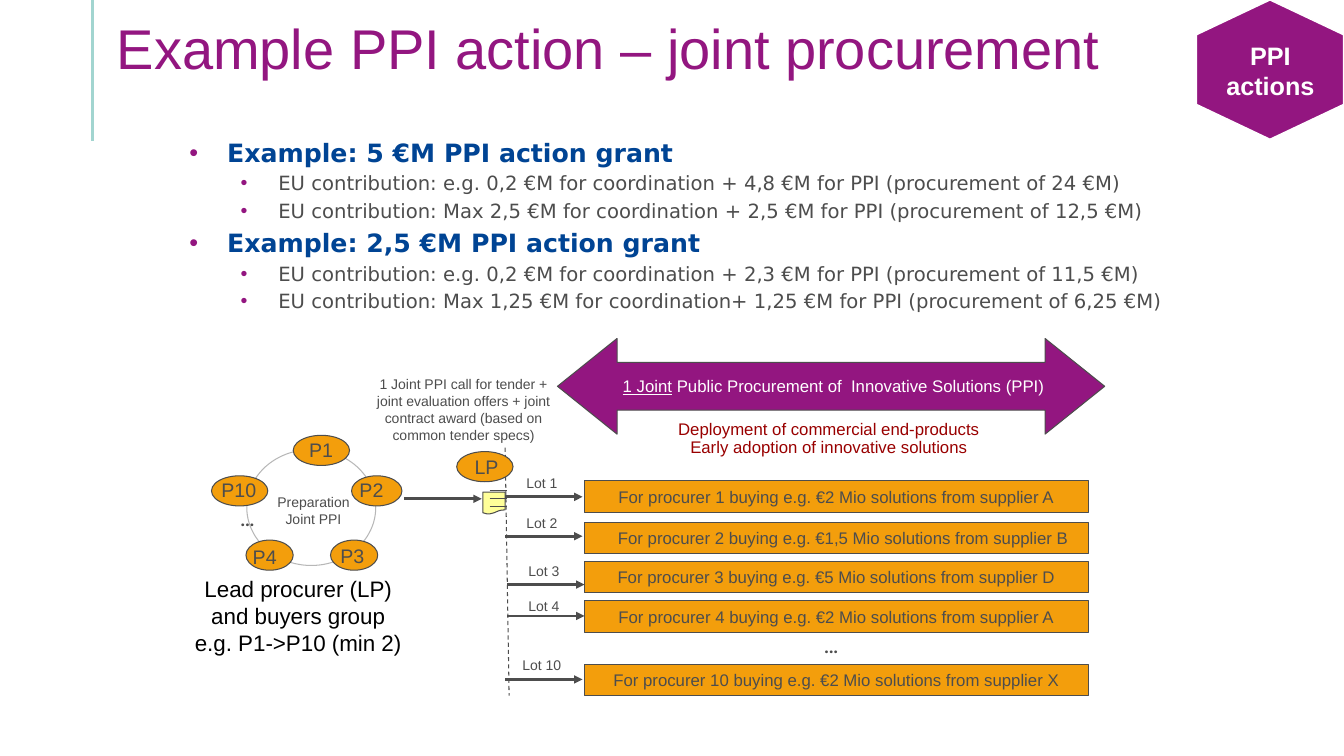
from lxml import etree
from pptx import Presentation
from pptx import util as u
from pptx.dml.color import RGBColor
from pptx.enum import dml, shapes, text
from pptx.oxml.ns import qn

HUES = {
    "plum": "931680", "gold": "F39E0C", "grey": "4D4D4D", "white": "FFFFFF",
    "blue": "004494", "mint": "A2D5D0", "red": "990000", "cream": "FFFF99",
    "black": "000000",
}
FORM = shapes.MSO_SHAPE
LEFT, MID = text.PP_ALIGN.LEFT, text.PP_ALIGN.CENTER

POINTS = [
    (0, "Example: 5 €M PPI action grant"),
    (1, "EU contribution: e.g. 0,2 €M for coordination + 4,8 €M for PPI (procurement of 24 €M)"),
    (1, "EU contribution: Max 2,5 €M for coordination + 2,5 €M for PPI (procurement of 12,5 €M)"),
    (0, "Example: 2,5 €M PPI action grant"),
    (1, "EU contribution: e.g. 0,2 €M for coordination + 2,3 €M for PPI (procurement of 11,5 €M)"),
    (1, "EU contribution: Max 1,25 €M for coordination+ 1,25 €M for PPI (procurement of 6,25 €M)"),
]
BUYERS = [
    ("P1", 7.39, 10.97, 1.42, 7.54, 10.92),
    ("P2", 8.86, 11.99, 1.27, 8.81, 11.91),
    ("P10", 5.33, 11.99, 1.42, 5.33, 11.91),
    ("P4", 6.2, 13.61, 1.19, 6.12, 13.61),
    ("P3", 8.33, 13.61, 1.19, 8.33, 13.59),
]
LEAD = ("LP", 11.51, 11.38, 1.42, 11.71, 11.33)
LOTS = [
    (1, "€2", "A", 12.12, 12.52, 11.84, 12.73, 0),
    (2, "€1,5", "B", 13.16, 13.51, 12.85, 12.73, 0.35),
    (3, "€5", "D", 14.15, 14.73, 14.05, 12.78, 0),
    (4, "€2", "A", 15.14, 15.52, 14.94, 12.78, 0),
    (10, "€2", "X", 16.74, 17.12, 16.43, 12.73, 0),
]


def hue(name):
    return RGBColor.from_string(HUES[name])


def span(*sizes):
    return [u.Cm(size) for size in sizes]


def style(para, size, tint, font="Arial", bold=False, align=LEFT):
    para.alignment = align
    for run in para.runs:
        run.font.size = u.Pt(size)
        run.font.name = font
        run.font.bold = bold
        run.font.color.rgb = hue(tint)


def label(slide, box, words, size, tint="grey", **look):
    frame = slide.shapes.add_textbox(*span(*box)).text_frame
    frame.word_wrap = True
    frame.text = words
    for para in frame.paragraphs:
        style(para, size, tint, **look)
    return frame


def block(slide, kind, box, fill, edge="grey", width=0.75):
    shape = slide.shapes.add_shape(kind, *span(*box))
    shape.shadow.inherit = False
    if fill:
        shape.fill.solid()
        shape.fill.fore_color.rgb = hue(fill)
    else:
        shape.fill.background()
    shape.line.color.rgb = hue(edge)
    shape.line.width = u.Pt(width)
    return shape


def line(slide, ends, tint="grey", width=0.75, head=False, dash=False):
    link = slide.shapes.add_connector(shapes.MSO_CONNECTOR.STRAIGHT, *span(*ends))
    link.line.color.rgb = hue(tint)
    link.line.width = u.Pt(width)
    if dash:
        link.line.dash_style = dml.MSO_LINE.DASH
    props = link._element.spPr
    if head:
        etree.SubElement(props.find(qn("a:ln")), qn("a:tailEnd"), type="triangle")
    etree.SubElement(props, qn("a:effectLst"))


def node(slide, name, left, top, width, tx, ty):
    block(slide, FORM.OVAL, (left, top, width, 0.76), "gold")
    label(slide, (tx, ty, 1.75, 0.86), name, 14)


def place(holder, box):
    holder.left, holder.top, holder.width, holder.height = span(*box)
    holder.text_frame.auto_size = text.MSO_AUTO_SIZE.NONE


def title(slide):
    head = slide.shapes.title
    place(head, (2.69, -0.13, 30.71, 2.18))
    frame = head.text_frame
    frame.text = "Example PPI action – joint procurement"
    frame.vertical_anchor = text.MSO_ANCHOR.BOTTOM
    frame.margin_bottom = 0
    frame.paragraphs[0].line_spacing = 0.9
    style(frame.paragraphs[0], 40, "plum")


def bullet(para, indent):
    props = para._p.get_or_add_pPr()
    props.set("marL", str(u.Cm(indent)))
    props.set("indent", str(u.Cm(-0.95)))
    tone = etree.SubElement(props, qn("a:buClr"))
    etree.SubElement(tone, qn("a:srgbClr"), val=HUES["plum"])
    etree.SubElement(props, qn("a:buChar"), char="•")


def points(slide):
    body = slide.placeholders[1]
    place(body, (4.52, 3.33, 25.4, 4.83))
    frame = body.text_frame
    frame.text = "\n".join(words for _, words in POINTS)
    for para, (level, _) in zip(frame.paragraphs, POINTS):
        para.level = level
        size, tint = (14, "grey") if level else (18, "blue")
        style(para, size, tint, font="DejaVu Sans", bold=not level)
        bullet(para, 2.24 if level else 0.95)


def banner(slide):
    arrow = block(slide, FORM.LEFT_RIGHT_ARROW, (14.05, 8.53, 13.79, 2.41), "plum")
    arrow.adjustments[0], arrow.adjustments[1] = 0.5, 0.623
    goals = label(slide, (13.84, 10.49, 14.1, 1.65),
                  "Deployment of commercial end-products\nEarly adoption of innovative solutions",
                  12, "red", align=MID)
    for para in goals.paragraphs:
        para.line_spacing = 0.9
    para = label(slide, (14.38, 9.35, 13.26, 0.76), "1 Joint", 12).paragraphs[0]
    para.add_run().text = " Public Procurement of  Innovative Solutions (PPI)"
    style(para, 12, "white", align=MID)
    para.runs[0].font.underline = True


def buyers(slide):
    ring = block(slide, FORM.OVAL, (6.22, 11.33, 3.25, 2.92), None)
    tone = ring.line._ln.find(".//" + qn("a:srgbClr"))
    etree.SubElement(tone, qn("a:alpha"), val="40000")
    label(slide, (6.53, 12.32, 2.74, 1.12), "Preparation\nJoint PPI", 10, align=MID)
    for buyer in BUYERS:
        node(slide, *buyer)
    label(slide, (4.52, 14.38, 5.99, 2.31),
          "Lead procurer (LP) and buyers group\ne.g. P1->P10 (min 2)", 16, "black", align=MID)


def tender(slide):
    line(slide, (10.19, 12.57, 12.14, 12.57), width=2, head=True)
    block(slide, FORM.FLOWCHART_DOCUMENT, (12.17, 12.4, 0.56, 0.56), "cream")
    for step in range(3):
        rule = 12.37 + 0.2 * step
        line(slide, (12.34, rule, 12.78, rule))
    line(slide, (12.73, 11.28, 12.83, 17.53), dash=True)
    label(slide, (9.14, 9.35, 5.08, 1.96),
          "1 Joint PPI call for tender + joint evaluation offers + joint contract award "
          "(based on common tender specs)", 10, align=MID)


def lot(slide, number, price, source, top, level, above, start, shift):
    bar = block(slide, FORM.RECTANGLE, (14.73, top, 12.7, 0.79), "gold")
    frame = bar.text_frame
    frame.text = f"For procurer {number} buying e.g. {price} Mio solutions from supplier {source}"
    frame.vertical_anchor = text.MSO_ANCHOR.MIDDLE
    frame.margin_left = u.Cm(0.25 + shift)
    style(frame.paragraphs[0], 12, "grey", align=MID)
    line(slide, (start, level, start + 1.95, level), width=2, head=True)
    label(slide, (start, above, 1.85, 0.69), f"Lot {number}", 10, align=MID)


def badge(slide):
    block(slide, FORM.HEXAGON, (30.25, -0.1, 3.51, 3.71), "plum", "white", 1).rotation = 90
    label(slide, (29.31, 0.89, 5.41, 1.8), "PPI\nactions", 18, "white", bold=True, align=MID)


def main():
    deck = Presentation()
    deck.slide_width, deck.slide_height = span(33.87, 19.05)
    slide = deck.slides.add_slide(deck.slide_layouts[1])
    line(slide, (2.34, 0, 2.34, 3.56), "mint", 2.25)
    title(slide)
    points(slide)
    banner(slide)
    buyers(slide)
    tender(slide)
    for row in LOTS:
        lot(slide, *row)
    for left, top in ((5.74, 12.52), (20.45, 15.7)):
        label(slide, (left, top, 0.99, 1.02), "…", 18, font="Karla", align=MID)
    badge(slide)
    node(slide, *LEAD)
    deck.save("out.pptx")


if __name__ == "__main__":
    main()
